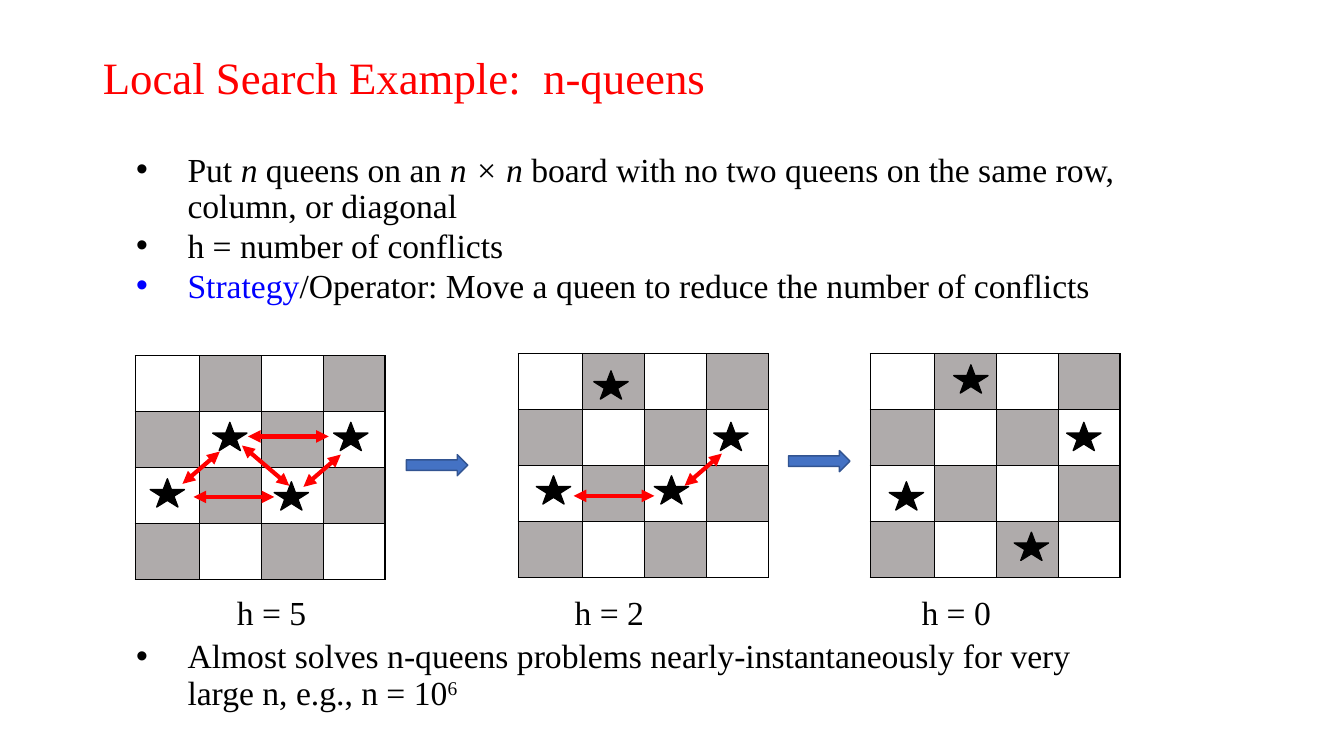
"""Build the n-queens local search slide."""
from dataclasses import dataclass

from lxml import etree
from pptx import Presentation
from pptx.dml.color import RGBColor
from pptx.enum import shapes, text
from pptx.oxml import ns
from pptx.util import Inches, Pt


@dataclass(frozen=True)
class Theme:
    font: str = "Times New Roman"
    title_size: int = 32
    body_size: int = 24
    red: str = "FF0000"
    black: str = "000000"
    blue: str = "0000FF"
    light: str = "FFFFFF"
    dark: str = "AFABAB"
    arrow: str = "4472C4"
    arrow_line: str = "325491"


THEME = Theme()
TITLE = "Local Search Example:  n-queens"
BULLETS = [
    dict(before=0, runs=[("Put ", ""), ("n", "italic"), (" queens on an ", ""), ("n × n", "italic"),
                         (" board with no two queens on the same row, column, or diagonal", "")]),
    dict(before=2.5, runs=[("h = number of conflicts", "")]),
    dict(before=2.5, runs=[("Strategy", "blue"),
                           ("/Operator: Move a queen to reduce the number of conflicts", "")]),
    dict(before=239, runs=[("Almost solves n-queens problems nearly-instantaneously for very "
                            "large n, e.g., n = 10", ""), ("6", "super")]),
]
BOARDS = [
    dict(at=(1.34, 3.53), label="h = 5", label_left=2.35,
         queens=[(1.49, 4.75), (2.72, 4.78), (2.11, 4.19), (3.31, 4.19)]),
    dict(at=(5.14, 3.51), label="h = 2", label_left=5.7,
         queens=[(5.32, 4.72), (5.89, 3.68), (6.49, 4.72), (7.08, 4.19)]),
    dict(at=(8.63, 3.51), label="h = 0", label_left=9.14,
         queens=[(8.82, 4.78), (9.46, 3.62), (10.06, 5.28), (10.58, 4.19)]),
]
CONFLICTS = [
    (2.46, 4.33, 3.26, 4.33), (1.92, 4.93, 2.72, 4.93), (1.81, 4.8, 2.18, 4.48),
    (3.01, 4.83, 3.38, 4.51), (2.4, 4.42, 2.87, 4.82),
    (5.69, 4.92, 6.49, 4.92), (6.79, 4.82, 7.16, 4.5),
]
STEPS = [(4.03, 4.51), (7.82, 4.47)]
SIDE = 4
BOARD = (2.48, 2.22)
FIRST_COLUMN = 0.64
QUEEN = (0.34, 0.28)
STEP = (0.61, 0.21)
LABEL_TOP, LABEL_SIZE = 5.87, (0.9, 0.4)
HANG = 0.51
LINE_SPACING = 0.9


def rgb(value):
    return RGBColor.from_string(value)


def child(parent, tag, **attrs):
    return etree.SubElement(parent, ns.qn(tag), {k: str(v) for k, v in attrs.items()})


def place(sp, left, top, width, height):
    sp.left, sp.top, sp.width, sp.height = map(Inches, (left, top, width, height))


def add_run(p, content, size, color):
    r = p.add_run()
    r.text = content
    r.font.name, r.font.size = THEME.font, Pt(size)
    r.font.color.rgb = rgb(color)
    return r


def add_title(sp):
    place(sp, 0.92, 0.26, 8.55, 1.07)
    tf = sp.text_frame
    tf.vertical_anchor = text.MSO_ANCHOR.MIDDLE
    p = tf.paragraphs[0]
    p.alignment, p.line_spacing = text.PP_ALIGN.LEFT, LINE_SPACING
    add_run(p, TITLE, THEME.title_size, THEME.red)


def add_body(sp):
    place(sp, 1.25, 1.47, 10.15, 6.03)
    tf = sp.text_frame
    tf.auto_size = text.MSO_AUTO_SIZE.NONE
    for i, item in enumerate(BULLETS):
        p = tf.add_paragraph() if i else tf.paragraphs[0]
        props = p._p.get_or_add_pPr()
        props.set("marL", str(Inches(HANG)))
        props.set("indent", str(-Inches(HANG)))
        child(props, "a:buFont", typeface="Arial")
        child(props, "a:buChar", char="•")
        p.line_spacing, p.space_before = LINE_SPACING, Pt(item["before"])
        for content, style in item["runs"]:
            r = add_run(p, content, THEME.body_size, THEME.blue if style == "blue" else THEME.black)
            r.font.italic = style == "italic"
            if style == "super":
                r._r.get_or_add_rPr().set("baseline", "30000")


def add_board(s, left, top):
    width, height = BOARD
    frame = s.shapes.add_table(SIDE, SIDE, *map(Inches, (left, top, width, height)))
    table = frame.table
    table.first_row = table.horz_banding = False
    for i in range(SIDE):
        column = (width - FIRST_COLUMN) / (SIDE - 1) if i else FIRST_COLUMN
        table.columns[i].width = Inches(column)
        table.rows[i].height = Inches(height / SIDE)
    for i in range(SIDE * SIDE):
        row, col = divmod(i, SIDE)
        cell = table.cell(row, col)
        props = cell._tc.get_or_add_tcPr()
        for edge in "LRTB":
            border = child(props, f"a:ln{edge}", w=Pt(1))
            child(child(border, "a:solidFill"), "a:srgbClr", val=THEME.black)
        cell.fill.solid()
        cell.fill.fore_color.rgb = rgb(THEME.dark if (row + col) % 2 else THEME.light)


def add_label(s, content, left):
    tf = s.shapes.add_textbox(*map(Inches, (left, LABEL_TOP) + LABEL_SIZE)).text_frame
    tf.word_wrap = True
    tf.margin_left = tf.margin_right = tf.margin_top = tf.margin_bottom = 0
    add_run(tf.paragraphs[0], content, THEME.body_size, THEME.black)


def add_shape(s, kind, at, size, fill, line):
    sp = s.shapes.add_shape(kind, *map(Inches, at + size))
    sp.shadow.inherit = False
    sp.fill.solid()
    sp.fill.fore_color.rgb = rgb(fill)
    sp.line.color.rgb, sp.line.width = rgb(line), Pt(1)


def add_conflict(s, ends):
    link = s.shapes.add_connector(shapes.MSO_CONNECTOR.STRAIGHT, *map(Inches, ends))
    link.line.color.rgb, link.line.width = rgb(THEME.red), Pt(3)
    for end in ("a:headEnd", "a:tailEnd"):
        child(link.line._get_or_add_ln(), end, type="triangle")
    child(link._element.spPr, "a:effectLst")


def main():
    prs = Presentation()
    prs.slide_width, prs.slide_height = Inches(13.33), Inches(7.5)
    s = prs.slides.add_slide(prs.slide_layouts[1])
    add_title(s.shapes.title)
    add_body(s.placeholders[1])
    for board in BOARDS:
        add_board(s, *board["at"])
        add_label(s, board["label"], board["label_left"])
        for queen in board["queens"]:
            add_shape(s, shapes.MSO_SHAPE.STAR_5_POINT, queen, QUEEN, THEME.black, THEME.black)
    for ends in CONFLICTS:
        add_conflict(s, ends)
    for step in STEPS:
        add_shape(s, shapes.MSO_SHAPE.RIGHT_ARROW, step, STEP, THEME.arrow, THEME.arrow_line)
    prs.save("out.pptx")


if __name__ == "__main__":
    main()
